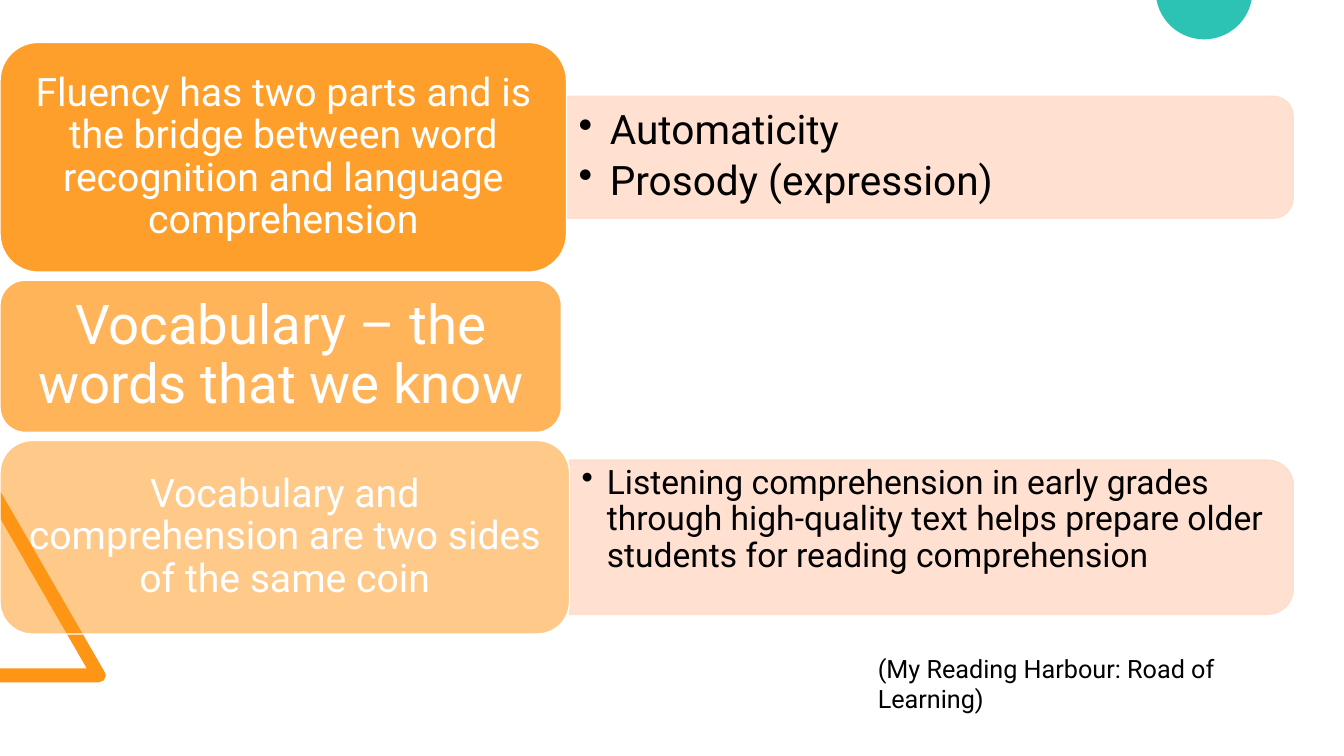
import math
import pptx
import pptx.util
import pptx.dml.color
import pptx.enum.shapes
import pptx.enum.text
import pptx.oxml
import pptx.oxml.ns

MSO = pptx.enum.shapes.MSO_SHAPE
ALIGN = pptx.enum.text.PP_ALIGN
ANCHOR = pptx.enum.text.MSO_ANCHOR
Pt = pptx.util.Pt

prs = pptx.Presentation()
prs.slide_width = pptx.util.Inches(13.333)
prs.slide_height = pptx.util.Inches(7.5)
s = prs.slides.add_slide(prs.slide_layouts[6])
cell = prs.slide_height / 75


def paint(fmt, color, alpha=100):
    fmt.solid()
    fmt.fore_color.rgb = pptx.dml.color.RGBColor.from_string(color)
    if alpha < 100:
        clr = fmt._xPr.find(".//" + pptx.oxml.ns.qn("a:srgbClr"))
        clr.append(pptx.oxml.parse_xml(
            f'<a:alpha {pptx.oxml.ns.nsdecls("a")} val="{alpha * 1000}"/>'))


def write(sp, lines, size, color, insets, hang=0, **formats):
    tf = sp.text_frame
    left, top, bottom = (int(v * cell) for v in insets)
    frame = dict(word_wrap=True, vertical_anchor=ANCHOR.MIDDLE, margin_left=left,
                 margin_right=left, margin_top=top, margin_bottom=bottom)
    for name, value in frame.items():
        setattr(tf, name, value)
    for i, line in enumerate(lines):
        p = tf.paragraphs[0] if i == 0 else tf.add_paragraph()
        if hang:
            pPr = p._p.get_or_add_pPr()
            pPr.set("marL", str(int(hang * cell)))
            pPr.set("indent", str(int(-hang * cell)))
            pPr.append(pptx.oxml.parse_xml(
                f'<a:buChar {pptx.oxml.ns.nsdecls("a")} char="•"/>'))
        for name, value in formats.items():
            setattr(p, name, value)
        r = p.add_run()
        r.text = line
        for name, value in dict(size=Pt(size), name="Roboto").items():
            setattr(r.font, name, value)
        paint(r.font.fill, color)


triangle = [(0, 67.7), (0, 66.3), (8.6, 66.3), (0, 51.4), (0, 48.7),
            (10.4, 66.7), (10.5, 67), (10.3, 67.5), (9.8, 67.7)]
start = math.asin(0.9 / 4.8)
angles = [start + (math.pi - 2 * start) * i / 40 for i in range(41)]
disc = [(119.45 + 4.8 * math.cos(a), 4.8 * math.sin(a) - 0.9) for a in angles]
for points, color in [(triangle, "FF9514"), (disc, "2CC3B4")]:
    points = [(x * cell, y * cell) for x, y in points]
    fb = s.shapes.build_freeform(*points[0])
    fb.add_line_segments(points[1:], close=True)
    sp = fb.convert_to_shape()
    sp.shadow.inherit = False
    paint(sp.fill, color)
    sp.line.fill.background()

panel_right = 128.3
cards = [
    (56.2, 22.8, 90, 28, (1.2, 0.6, 0.6),
     "Fluency has two parts and is the bridge between word recognition and language comprehension",
     (12.1, 29, 3.1, 0.6, ["Automaticity", "Prosody (expression)"])),
    (55.7, 15.1, 70, 39, (1.6, 0.8, 0.8), "Vocabulary – the words that we know", None),
    (56.5, 19.2, 50, 28, (1.2, 0.6, 0.6),
     "Vocabulary and comprehension are two sides of the same coin",
     (15.3, 24, 2.5, 4, ["Listening comprehension in early grades through high-quality text "
                         "helps prepare older students for reading comprehension"])),
]
top = 4.2
for w, h, alpha, size, insets, title, panel in cards:
    if panel:
        ph, psize, hang, bottom, lines = panel
        pw = panel_right - w
        mid = top + h / 2
        sp = s.shapes.add_shape(MSO.ROUND_2_SAME_RECTANGLE, int((w + pw / 2 - ph / 2) * cell),
                                int((mid - pw / 2) * cell), int(ph * cell), int(pw * cell))
        sp.rotation = 90
        sp.shadow.inherit = False
        paint(sp.fill, "FFDDCC", 90)
        paint(sp.line.fill, "FFDDCC", 90)
        sp.line.width = Pt(1)
        th = ph * 0.9
        tb = s.shapes.add_textbox(int(w * cell), int((mid - th / 2) * cell),
                                  int((pw - ph / 20) * cell), int(th * cell))
        write(tb, lines, psize, "000000", (1.2, 0.6, bottom), hang,
              line_spacing=0.9, space_after=Pt(5))
    sp = s.shapes.add_shape(MSO.ROUNDED_RECTANGLE, 0, int(top * cell),
                            int(w * cell), int(h * cell))
    sp.shadow.inherit = False
    paint(sp.fill, "FF9514", alpha)
    paint(sp.line.fill, "FFFFFF")
    sp.line.width = Pt(1)
    write(sp, [title], size, "FFFFFF", insets, alignment=ALIGN.CENTER, line_spacing=0.9)
    top += h + 0.8

tb = s.shapes.add_textbox(int(86.1 * cell), int(64.3 * cell), int(45.5 * cell), int(4 * cell))
write(tb, ["(My Reading Harbour: Road of Learning)"], 18, "000000", (1, 0.5, 0.5))
tb.text_frame.vertical_anchor = ANCHOR.TOP

prs.save("out.pptx")
